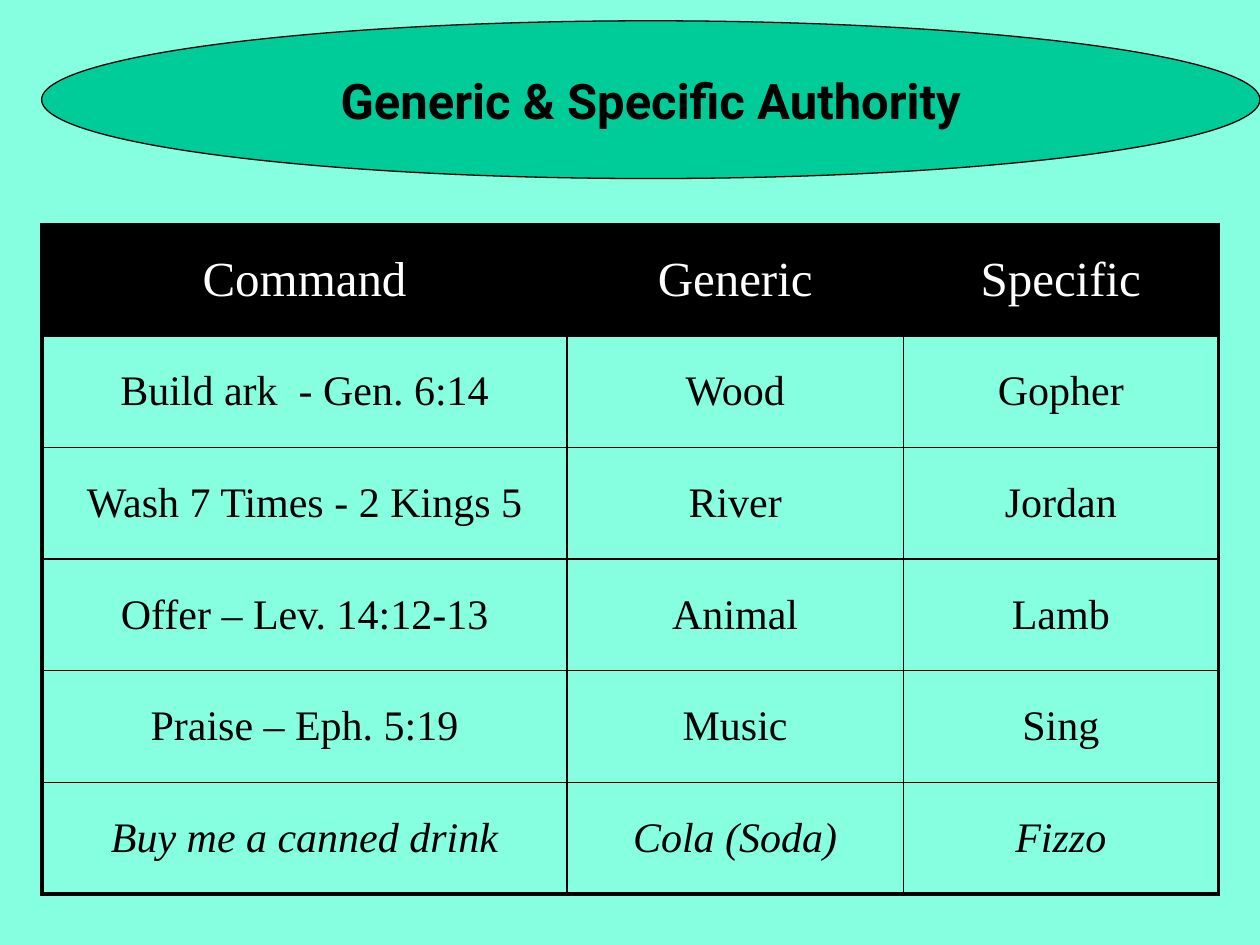
from dataclasses import dataclass

from lxml.etree import SubElement
from pptx import Presentation
from pptx.dml.color import RGBColor
from pptx.enum.shapes import MSO_SHAPE
from pptx.enum.text import MSO_ANCHOR, PP_ALIGN
from pptx.oxml.ns import qn
from pptx.slide import Slide
from pptx.table import _Cell
from pptx.util import Cm, Pt


@dataclass(frozen=True)
class Theme:
    background: str = "85FFE0"
    banner: str = "00CC99"
    ink: str = "000000"
    header_text: str = "FFFFFF"
    title_font: str = "Roboto"
    table_font: str = "Times New Roman"
    heading_size: float = 28
    body_size: float = 24
    thin: float = 1
    thick: float = 2.25


@dataclass(frozen=True)
class Box:
    left: float
    top: float
    width: float
    height: float

    def lengths(self) -> tuple:
        return Cm(self.left), Cm(self.top), Cm(self.width), Cm(self.height)


@dataclass(frozen=True)
class Example:
    command: str
    generic: str
    specific: str
    italic: bool = False


THEME = Theme()
BANNER = Box(0.84, 0.42, 24.56, 3.18)
TABLE = Box(0.85, 4.52, 23.71, 13.5)
COLUMN_WIDTHS = (10.58, 6.78, 6.35)
HEADER = Example("Command", "Generic", "Specific")
EXAMPLES = (
    Example("Build ark  - Gen. 6:14", "Wood", "Gopher"),
    Example("Wash 7 Times - 2 Kings 5", "River", "Jordan"),
    Example("Offer – Lev. 14:12-13", "Animal", "Lamb"),
    Example("Praise – Eph. 5:19", "Music", "Sing"),
    Example("Buy me a canned drink", "Cola (Soda)", "Fizzo", italic=True),
)


def rgb(colour: str) -> RGBColor:
    return RGBColor.from_string(colour)


def draw_title(slide: Slide, text: str) -> None:
    # Oval behind the title
    oval = slide.shapes.add_shape(MSO_SHAPE.OVAL, *BANNER.lengths())
    oval.shadow.inherit = False
    oval.fill.solid()
    oval.fill.fore_color.rgb = rgb(THEME.banner)
    oval.line.color.rgb = rgb(THEME.ink)
    oval.line.width = Pt(0.75)

    # Title placeholder, brought in front of the oval
    title = slide.shapes.title
    oval._element.addnext(title._element)
    title.left, title.top, title.width, title.height = BANNER.lengths()
    title.text_frame.text = text
    title.text_frame.vertical_anchor = MSO_ANCHOR.MIDDLE
    paragraph = title.text_frame.paragraphs[0]
    paragraph.alignment = PP_ALIGN.CENTER
    font = paragraph.font
    font.name, font.size, font.bold = THEME.title_font, Pt(THEME.heading_size), True
    font.color.rgb = rgb(THEME.ink)


def add_border(cell: _Cell, side: str, width: float) -> None:
    line = SubElement(cell._tc.get_or_add_tcPr(), qn(f"a:ln{side}"), w=str(Pt(width)))
    fill = SubElement(line, qn("a:solidFill"))
    SubElement(fill, qn("a:srgbClr"), val=THEME.ink)


def write_cell(cell: _Cell, text: str, is_header: bool, italic: bool) -> None:
    cell.text = text
    cell.vertical_anchor = MSO_ANCHOR.MIDDLE
    paragraph = cell.text_frame.paragraphs[0]
    paragraph.alignment = PP_ALIGN.CENTER
    font = paragraph.font
    font.name, font.bold, font.italic = THEME.table_font, False, italic
    font.size = Pt(THEME.heading_size if is_header else THEME.body_size)
    font.color.rgb = rgb(THEME.header_text if is_header else THEME.ink)


def draw_table(slide: Slide, examples: tuple[Example, ...]) -> None:
    rows = (HEADER, *examples)
    last_row, last_column = len(rows) - 1, len(COLUMN_WIDTHS) - 1
    table = slide.shapes.add_table(len(rows), len(COLUMN_WIDTHS), *TABLE.lengths()).table
    table.horz_banding = False
    for column, width in zip(table.columns, COLUMN_WIDTHS):
        column.width = Cm(width)

    for r, example in enumerate(rows):
        table.rows[r].height = Cm(TABLE.height / len(rows))
        for c, text in enumerate((example.command, example.generic, example.specific)):
            cell = table.cell(r, c)
            write_cell(cell, text, r == 0, example.italic)
            # Thick lines on the outer edge, thin lines inside
            outer = {"L": c == 0, "R": c == last_column, "T": r == 0, "B": r == last_row}
            for side, is_outer in outer.items():
                add_border(cell, side, THEME.thick if is_outer else THEME.thin)
            # Black header, clear body
            if r == 0:
                cell.fill.solid()
                cell.fill.fore_color.rgb = rgb(THEME.ink)
            else:
                cell.fill.background()


def main() -> None:
    presentation = Presentation()
    presentation.slide_width, presentation.slide_height = Cm(25.4), Cm(19.05)
    slide = presentation.slides.add_slide(presentation.slide_layouts[5])
    slide.background.fill.solid()
    slide.background.fill.fore_color.rgb = rgb(THEME.background)
    draw_title(slide, "Generic & Specific Authority")
    draw_table(slide, EXAMPLES)
    presentation.save("out.pptx")


if __name__ == "__main__":
    main()
